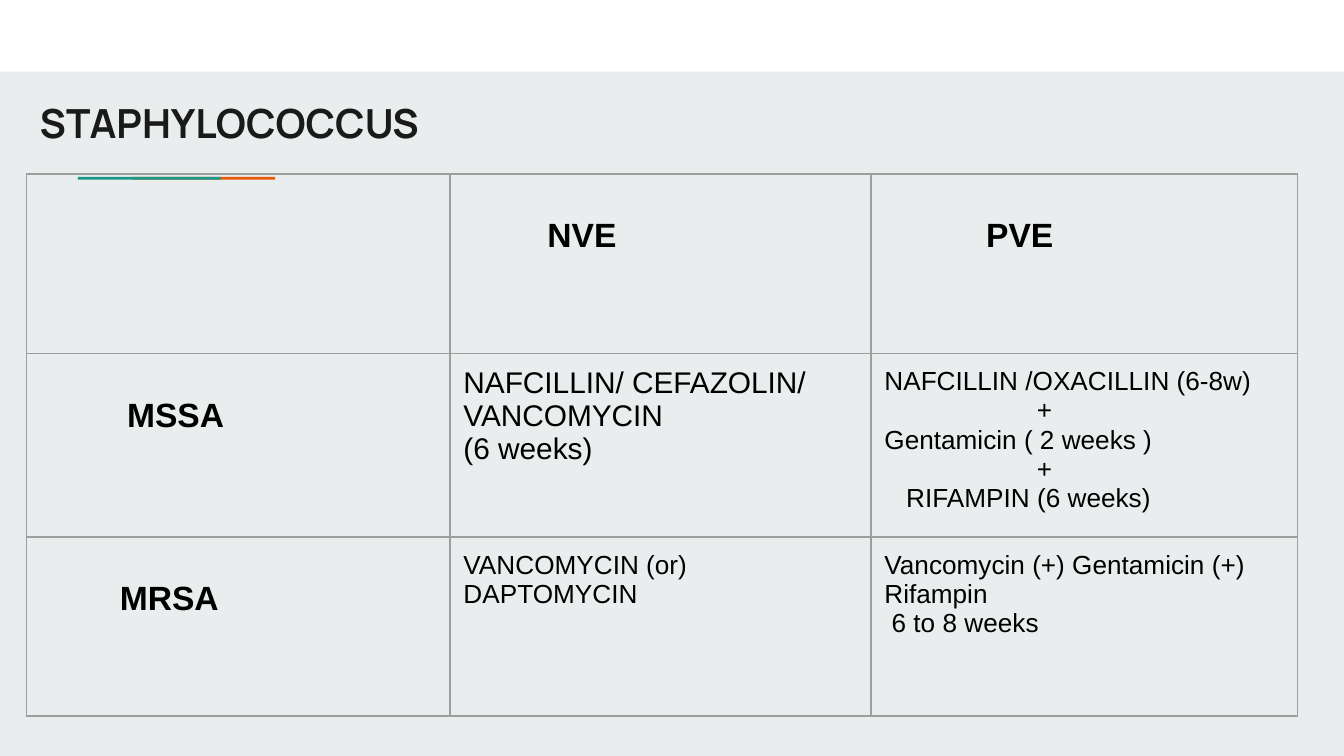
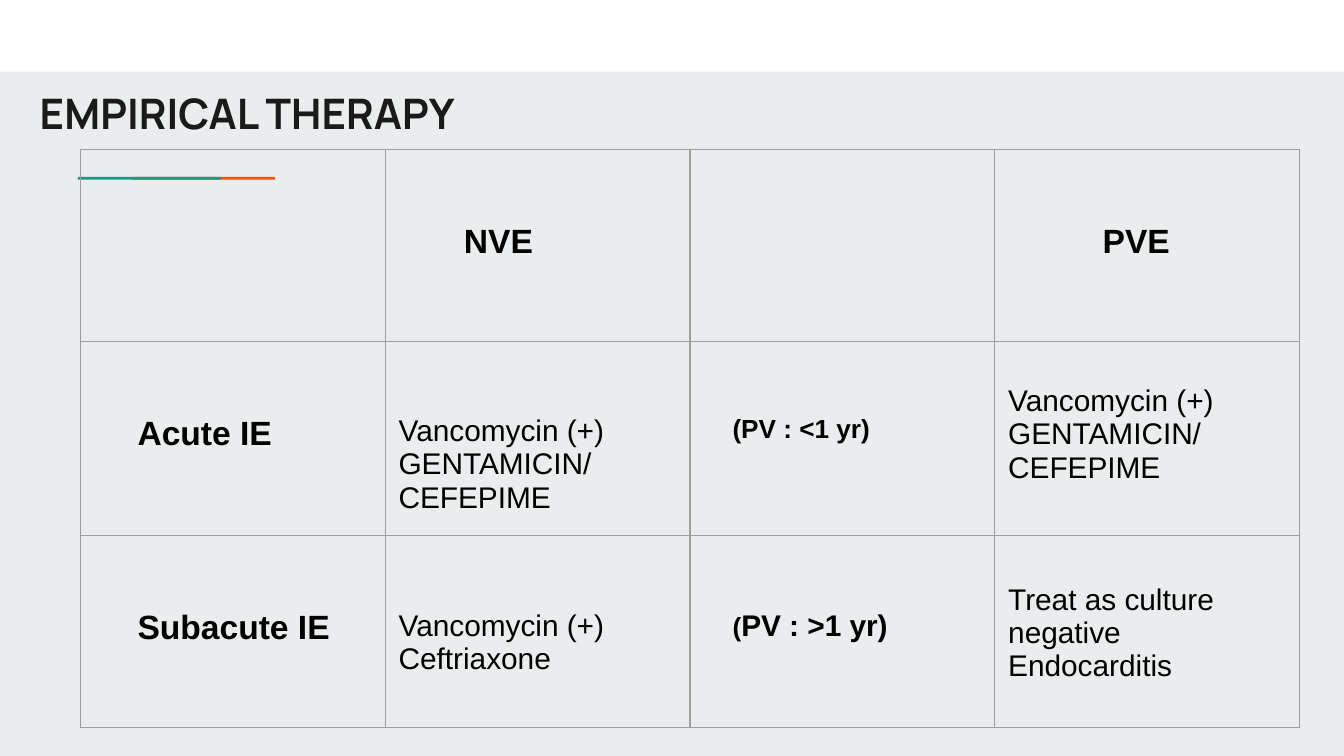
from lxml import etree
from pptx import Presentation
from pptx.dml import color
from pptx.enum import shapes, text
from pptx.oxml import ns
from pptx.util import Pt

PAPER, WHITE, INK, BLACK = "E9EDEE", "FFFFFF", "1A1A1A", "000000"
TEAL, ORANGE, GREY = "1A9988", "EB5600", "9E9E9E"
HEAD, BODY = "Manrope", "Arial"
PAD = 7.2
LINE = 16.1  # height of one 14 pt line
PLAIN = "{2D5ABB26-0587-4C30-8999-92F81FD0307C}"  # table style without grid


def rgb(code):
    return color.RGBColor.from_string(code)


def write(par, words, size=14, font=BODY, ink=BLACK, bold=False, indent=0):
    """Add one formatted run to a paragraph."""
    run = par.add_run()
    run.text = words
    run.font.size = Pt(size)
    run.font.name = font
    run.font.bold = bold
    run.font.color.rgb = rgb(ink)
    if indent:
        props = par._p.get_or_add_pPr()
        props.set("marL", str(Pt(indent)))
        props.set("indent", "0")


def item(words, size=14, indent=0, bold=False):
    """A paragraph: a list of runs with their format."""
    return [(words, dict(size=size, indent=indent, bold=bold))]


def label(words, indent, lines=1):
    """A cell with a bold heading."""
    return lines * LINE, [item(words, 18, indent, True)]


def edge(cell):
    """Draw the four borders of a cell."""
    props = cell._tc.get_or_add_tcPr()
    for side in ("lnL", "lnR", "lnT", "lnB"):
        line = etree.SubElement(props, ns.qn("a:" + side), w=str(Pt(0.75)))
        fill = etree.SubElement(line, ns.qn("a:solidFill"))
        etree.SubElement(fill, ns.qn("a:srgbClr"), val=GREY)


class Deck:
    def __init__(self):
        self.prs = Presentation()
        self.prs.slide_width, self.prs.slide_height = Pt(720), Pt(405)
        self.slide = None

    def page(self):
        """Start a slide with the shared band and accent rule."""
        self.slide = self.prs.slides.add_slide(self.prs.slide_layouts[6])
        fill = self.slide.background.fill
        fill.solid()
        fill.fore_color.rgb = rgb(PAPER)
        self.bar(0, 0, 720, 38.4, WHITE)
        self.bar(70.9, 94.8, 76.6, 1.5, ORANGE)
        self.bar(41.8, 94.8, 76.6, 1.5, TEAL)

    def bar(self, x, y, w, h, code):
        box = self.slide.shapes.add_shape(
            shapes.MSO_SHAPE.RECTANGLE, Pt(x), Pt(y), Pt(w), Pt(h))
        box.shadow.inherit = False
        box.fill.solid()
        box.fill.fore_color.rgb = rgb(code)
        box.line.fill.background()

    def title(self, words, y, w, size):
        box = self.slide.shapes.add_textbox(Pt(14.2), Pt(y), Pt(w), Pt(55))
        frame = box.text_frame
        frame.word_wrap = True
        frame.vertical_anchor = text.MSO_ANCHOR.TOP
        frame.margin_left = frame.margin_right = Pt(PAD)
        frame.margin_top = frame.margin_bottom = Pt(PAD)
        write(frame.paragraphs[0], words, size, HEAD, INK, True)

    def table(self, x, y, cols, high, rows):
        frame = self.slide.shapes.add_table(
            len(rows), len(cols), Pt(x), Pt(y), Pt(sum(cols)),
            Pt(high * len(rows)))
        grid = frame.table
        grid.first_row = grid.horz_banding = False
        grid._tbl.tblPr.find(ns.qn("a:tableStyleId")).text = PLAIN
        for col, wide in zip(grid.columns, cols):
            col.width = Pt(wide)
        for r, row in enumerate(rows):
            grid.rows[r].height = Pt(high)
            for c, entry in enumerate(row):
                self.cell(grid.cell(r, c), entry)

    def cell(self, cell, entry):
        edge(cell)
        cell.fill.background()
        gap, pars = entry or (0, [])
        cell.margin_left = cell.margin_right = cell.margin_bottom = Pt(PAD)
        cell.margin_top = Pt(PAD + gap)
        frame = cell.text_frame
        for i, runs in enumerate(pars):
            par = frame.add_paragraph() if i else frame.paragraphs[0]
            for words, style in runs:
                write(par, words, **style)


def main():
    deck = Deck()

    # Treatment by staphylococcus type
    deck.page()
    deck.title("STAPHYLOCOCCUS", 45.4, 605.5, 21.5)
    plus = item("+", indent=81.7)
    deck.table(14.2, 93.2, [226.9, 225.5, 228.5], 96, [
        [None, label("NVE", 45), label("PVE", 54.5)],
        [label("MSSA", 46.7),
         (0, [item("NAFCILLIN/ CEFAZOLIN/ VANCOMYCIN", 16),
              item("(6 weeks)", 16)]),
         (0, [item("NAFCILLIN /OXACILLIN (6-8w)"), plus,
              item("Gentamicin ( 2 weeks )"), plus,
              item("RIFAMPIN (6 weeks)", indent=11.7)])],
        [label("MRSA", 42.8),
         (0, [item("VANCOMYCIN (or) DAPTOMYCIN")]),
         (0, [item("Vancomycin (+) Gentamicin (+)"), item("Rifampin"),
              item("6 to 8 weeks", indent=3.9)])],
    ])

    # Empirical therapy by onset
    deck.page()
    deck.title("EMPIRICAL THERAPY", 39.6, 576, 22.5)
    mix = [item("Vancomycin (+) GENTAMICIN/ CEFEPIME", 16)]
    late = (item("(", 14, 15.6, True) + item("PV : >1 yr)", 16, 15.6, True))
    deck.table(43.1, 80.1, [163.3] * 4, 102.8, [
        [None, label("NVE", 35, 2), None, label("PVE", 50.6, 2)],
        [label("Acute IE", 23.4, 2), (2 * LINE, mix),
         (2 * LINE, [item("(PV : <1 yr)", 14, 15.6, True)]),
         (LINE, mix)],
        [label("Subacute IE", 23.4, 2),
         (2 * LINE, [item("Vancomycin (+) Ceftriaxone", 16)]),
         (2 * LINE, [late]),
         (18.4, [item("Treat as culture negative", 16),
                 item("Endocarditis", 16)])],
    ])

    deck.prs.save("out.pptx")


if __name__ == "__main__":
    main()
